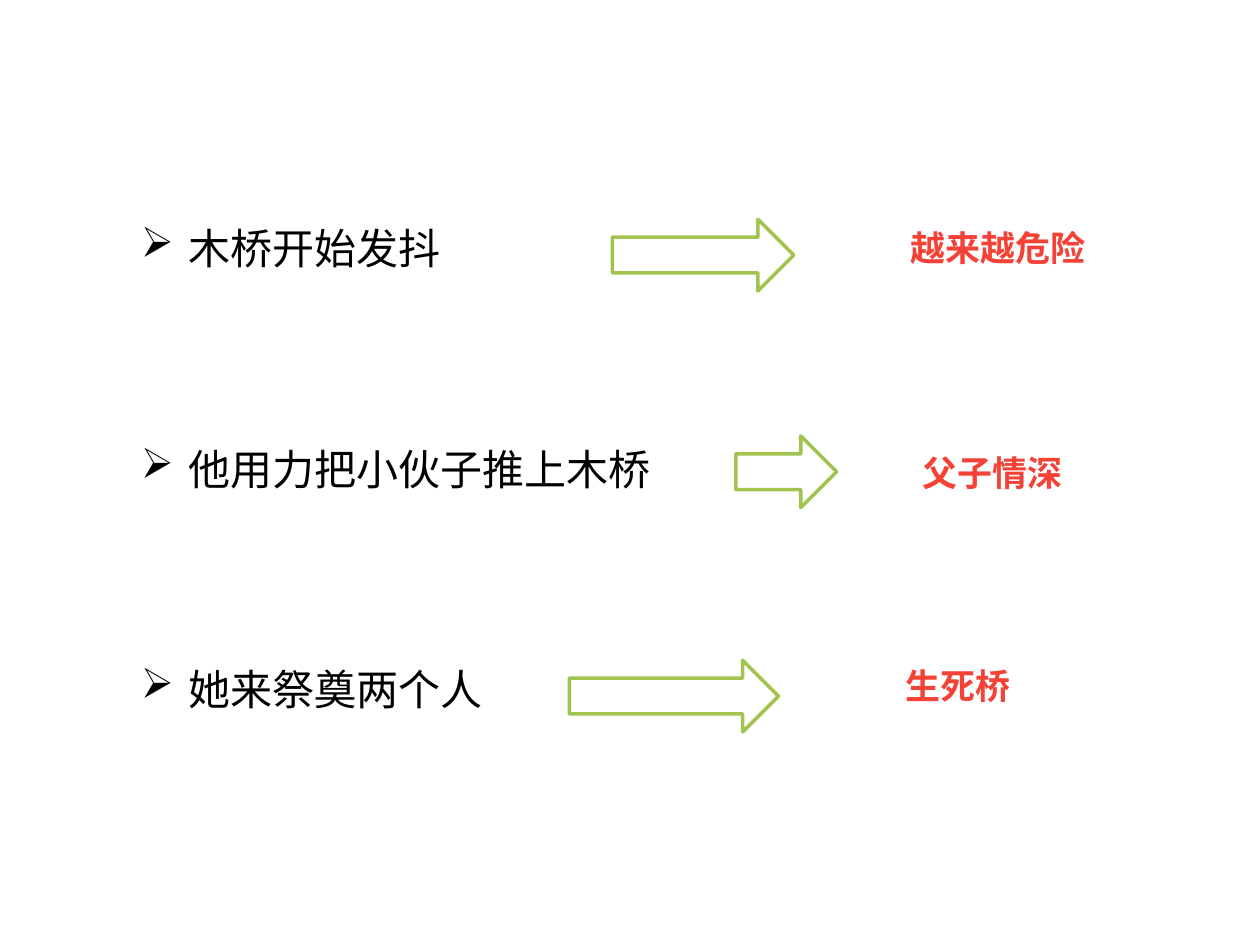
"""Builds a slide that links three plot events to their meanings."""
from dataclasses import dataclass

import lxml.etree
import pptx
import pptx.dml.color
import pptx.enum.shapes
import pptx.enum.text
import pptx.oxml.ns
import pptx.util

Pt = pptx.util.Pt
Color = pptx.dml.color.RGBColor
Shape = pptx.enum.shapes.MSO_SHAPE


@dataclass(frozen=True)
class Theme:
    event_color: Color = Color(0x00, 0x00, 0x00)
    meaning_color: Color = Color(0xF4, 0x42, 0x36)
    arrow_fill: Color = Color(0xFF, 0xFF, 0xFF)
    arrow_line: Color = Color(0xA1, 0xC4, 0x50)
    event_size: int = 24
    meaning_size: int = 20
    event_font: str = "Noto Sans CJK SC"
    meaning_font: str = "Calibri"
    east_asian_font: str = "Noto Sans CJK SC"


THEME = Theme()
EVENT_LEFT, EVENT_HEIGHT, EVENT_INDENT = 73.4, 45.4, 27
ARROW_HEIGHT = 41

ROWS = [
    ("木桥开始发抖", (109.4, 252), (349.9, 125.3, 103.7),
     "越来越危险", (477.4, 100.8, 185.8, 81.4)),
    ("他用力把小伙子推上木桥", (235.4, 337.7), (420.5, 249.1, 57.6),
     "父子情深", (486.7, 235.4, 161.3, 69.1)),
    ("她来祭奠两个人", (361.4, 226.8), (325.4, 377.3, 119.5),
     "生死桥", (477.4, 357.1, 139.7, 69.1)),
]


def add_child(parent, tag, **attributes):
    return lxml.etree.SubElement(parent, pptx.oxml.ns.qn(tag), attributes)


def add_span(para, text, font_name, size, color, bold=False):
    span = para.add_run()
    span.text = text
    span.font.name = font_name
    span.font.size = Pt(size)
    span.font.bold = bold
    span.font.color.rgb = color
    add_child(span.font._element, "a:ea", typeface=THEME.east_asian_font)


def add_event(page, text, top, width):
    box = page.shapes.add_textbox(Pt(EVENT_LEFT), Pt(top), Pt(width), Pt(EVENT_HEIGHT))
    box.text_frame.word_wrap = True
    para = box.text_frame.paragraphs[0]
    para.line_spacing = 1.5
    properties = para._p.get_or_add_pPr()
    properties.set("marL", str(Pt(EVENT_INDENT)))
    properties.set("indent", str(-Pt(EVENT_INDENT)))
    add_child(properties, "a:buChar", char="➢")
    add_span(para, text, THEME.event_font, THEME.event_size, THEME.event_color)


def add_arrow(page, left, top, width):
    arrow = page.shapes.add_shape(
        Shape.RIGHT_ARROW, Pt(left), Pt(top), Pt(width), Pt(ARROW_HEIGHT))
    arrow.shadow.inherit = False
    arrow.fill.solid()
    arrow.fill.fore_color.rgb = THEME.arrow_fill
    arrow.line.color.rgb = THEME.arrow_line
    arrow.line.width = Pt(2)


def add_meaning(page, text, left, top, width, height):
    shape = page.shapes.add_shape(
        Shape.FLOWCHART_SEQUENTIAL_ACCESS_STORAGE,
        Pt(left), Pt(top), Pt(width), Pt(height))
    shape.shadow.inherit = False
    shape.fill.background()
    shape.line.fill.background()
    frame = shape.text_frame
    frame.word_wrap = True
    frame.vertical_anchor = pptx.enum.text.MSO_ANCHOR.MIDDLE
    para = frame.paragraphs[0]
    para.alignment = pptx.enum.text.PP_ALIGN.CENTER
    add_span(para, text, THEME.meaning_font, THEME.meaning_size,
             THEME.meaning_color, bold=True)


def main():
    deck = pptx.Presentation()
    deck.slide_width, deck.slide_height = Pt(720), Pt(540)
    page = deck.slides.add_slide(deck.slide_layouts[6])
    for event, event_place, arrow_place, meaning, meaning_place in ROWS:
        add_event(page, event, *event_place)
        add_arrow(page, *arrow_place)
        add_meaning(page, meaning, *meaning_place)
    deck.save("out.pptx")


if __name__ == "__main__":
    main()
